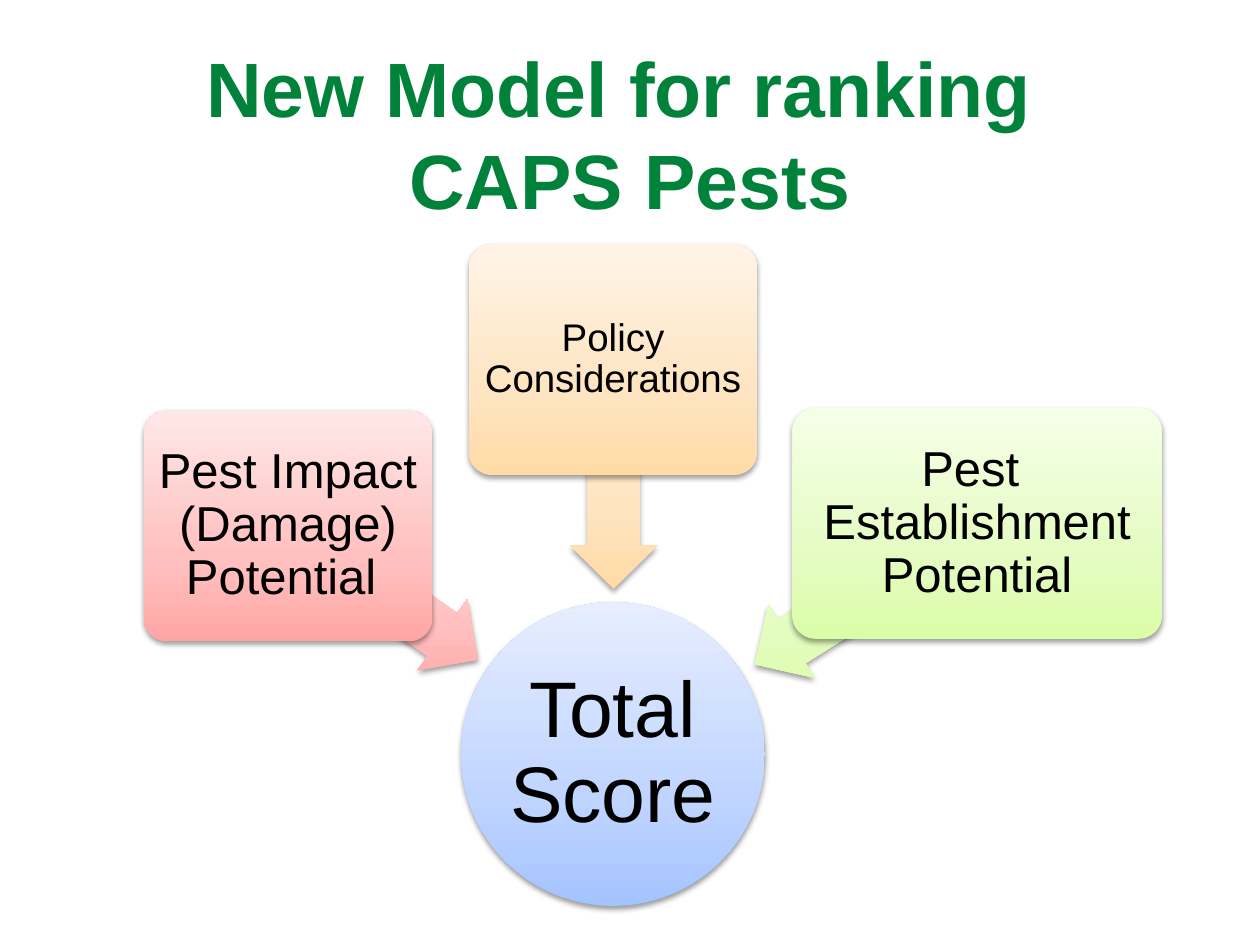
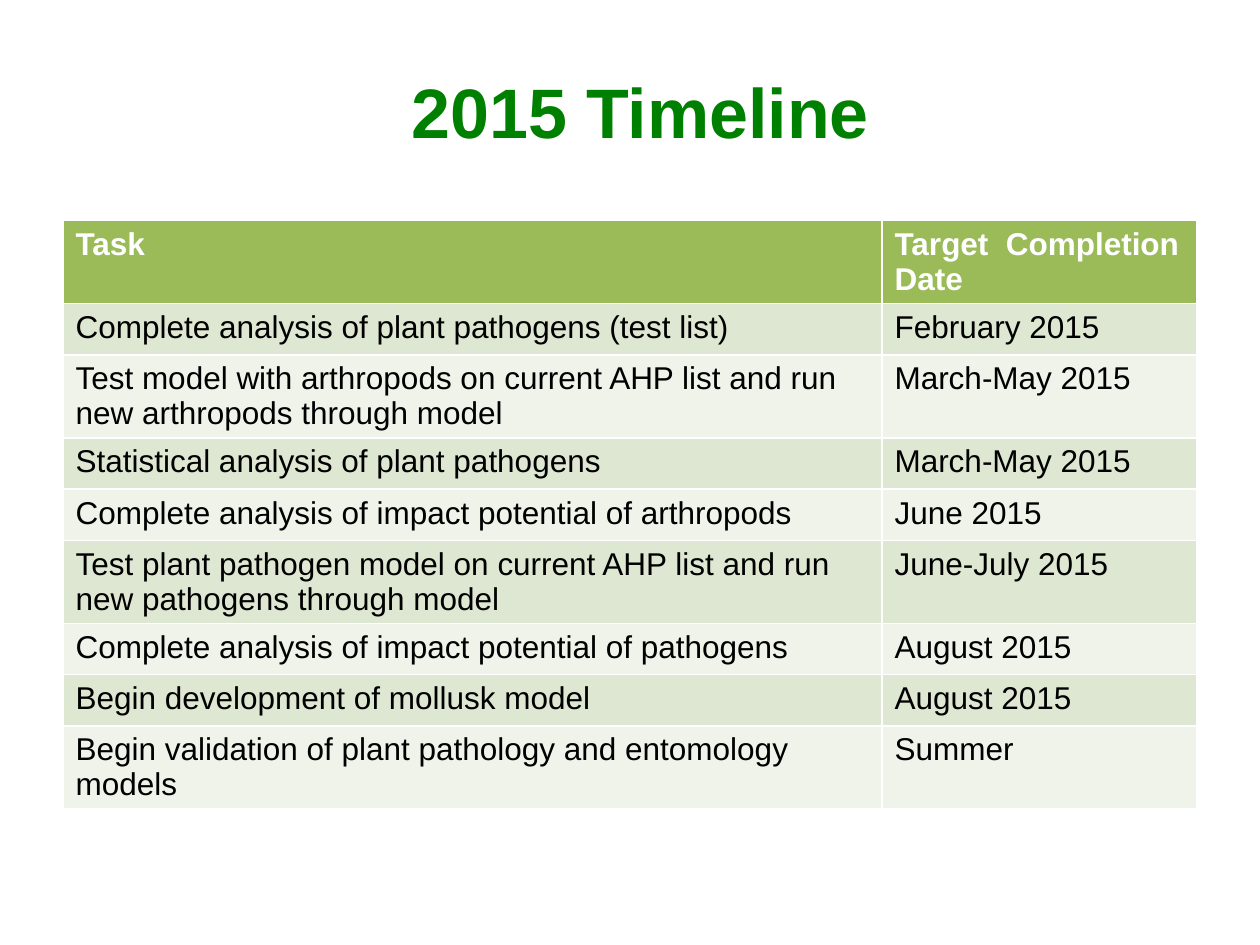
from copy import deepcopy

from pptx import Presentation
from pptx import util as u
from pptx.dml.color import RGBColor
from pptx.enum import shapes, text
from pptx.oxml import ns, parse_xml

FONT = "Arial"
BLACK, WHITE = "000000", "FFFFFF"
HEADER_GREEN, BANDS = "9BBB59", ("DEE7D1", "EFF3EA")
STOPS = (0, 0.35, 1)
RED = ("FFA6A5", "FFC0BF", "FFE7E7")
ORANGE = ("FFDAA5", "FEE4C0", "FFF4E7")
LIME = ("DAFDA7", "E4FCC2", "F5FFE7")
BLUE = ("A4C4FF", "BFD4FF", "E6EEFF")
SHADOW = (
    f'<a:effectLst {ns.nsdecls("a")}><a:outerShdw blurRad="40000" dist="20000" '
    'dir="5400000" rotWithShape="0"><a:srgbClr val="000000">'
    '<a:alpha val="38000"/></a:srgbClr></a:outerShdw></a:effectLst>'
)

deck = Presentation()
deck.slide_width, deck.slide_height = u.Inches(10), u.Inches(7.5)
COLUMN, ROW = deck.slide_width / 100, deck.slide_height / 75


def grid(left, top, width, height):
    """Turn columns and rows of a 100 by 75 grid into slide lengths."""
    return int(left * COLUMN), int(top * ROW), int(width * COLUMN), int(height * ROW)


def write(para, words, size, color, bold=False):
    """Add one formatted run to a paragraph."""
    span = para.add_run()
    span.text = words
    span.font.name, span.font.size, span.font.bold = FONT, u.Pt(size), bold
    span.font.color.rgb = RGBColor.from_string(color)


# Pages and their titles
titles = [
    (("New Model for ranking ", "CAPS Pests"), (5, 4.3, 90, 12.5), 44, "00823B"),
    (("2015 Timeline",), (5.8, 2.5, 90, 12.5), 40, "008000"),
]
pages = []
for lines, place, size, color in titles:
    page = deck.slides.add_slide(deck.slide_layouts[5])
    title = page.shapes.title
    title.left, title.top, title.width, title.height = grid(*place)
    title.text_frame.auto_size = text.MSO_AUTO_SIZE.NONE
    title.text_frame.vertical_anchor = text.MSO_ANCHOR.MIDDLE
    para = title.text_frame.paragraphs[0]
    para.alignment = text.PP_ALIGN.CENTER
    for number, line in enumerate(lines):
        if number:
            para.add_line_break()
        write(para, line, size, color, bold=True)
    pages.append(page)
model_page, timeline_page = pages

# Score model: each factor box lies over the arrow to the total
CIRCLE = shapes.MSO_SHAPE.OVAL
ARROW = shapes.MSO_SHAPE.LEFT_ARROW
BOX = shapes.MSO_SHAPE.ROUNDED_RECTANGLE
model_parts = [
    # kind, place, rotation, adjustments, gradient, paragraphs, text size, inset
    (CIRCLE, (36.6, 47.8, 24.1, 24.1), 0, (), BLUE, ["Total Score"], 45, 0.03),
    (ARROW, (21.1, 43.6, 18.5, 6.9), 215, (0.6, 0.5), RED, [], 0, 0),
    (BOX, (11.4, 32.6, 22.9, 18.3), 0, (0.1,), RED,
     ["Pest Impact (Damage) Potential "], 28, 0.05),
    (ARROW, (39.6, 34.2, 18.2, 6.9), 270, (0.6, 0.5), ORANGE, [], 0, 0),
    (BOX, (37.2, 19.4, 22.9, 18.3), 0, (0.1,), ORANGE,
     ["Policy Considerations"], 22, 0.05),
    (ARROW, (58.3, 43.7, 20.9, 6.9), 327.7, (0.6, 0.5), LIME, [], 0, 0),
    (BOX, (62.9, 32.4, 29.3, 18.3), 0, (0.1,), LIME,
     ["Pest ", "Establishment", "Potential"], 28, 0.05),
]
for kind, place, rotation, adjustments, colors, lines, size, inset in model_parts:
    shape = model_page.shapes.add_shape(kind, *grid(*place))
    shape.rotation = rotation
    for number, value in enumerate(adjustments):
        shape.adjustments[number] = value
    shape.line.fill.background()

    # Three-stop gradient, darkest at the bottom of the slide
    shape.fill.gradient()
    shape.fill.gradient_angle = 90
    properties = shape._element.spPr
    properties.find(ns.qn("a:gradFill")).set("rotWithShape", "0")
    stop_list = properties.find(".//" + ns.qn("a:gsLst"))
    stop_list.insert(1, deepcopy(stop_list[0]))
    for stop, position, color in zip(shape.fill.gradient_stops, STOPS, colors):
        stop.position = position
        stop.color.rgb = RGBColor.from_string(color)
    properties.append(parse_xml(SHADOW))

    frame = shape.text_frame
    frame.word_wrap = True
    frame.vertical_anchor = text.MSO_ANCHOR.MIDDLE
    frame.margin_left = frame.margin_right = u.Inches(inset)
    frame.margin_top = frame.margin_bottom = u.Inches(inset)
    for number, line in enumerate(lines):
        para = frame.add_paragraph() if number else frame.paragraphs[0]
        para.alignment = text.PP_ALIGN.CENTER
        para.line_spacing = 0.9
        write(para, line, size, BLACK)

# Timeline table
timeline = [
    ("Task", "Target  Completion Date"),
    ("Complete analysis of plant pathogens (test list)", "February 2015"),
    ("Test model with arthropods on current AHP list and run new arthropods "
     "through model", "March-May 2015"),
    ("Statistical analysis of plant pathogens", "March-May 2015"),
    ("Complete analysis of impact potential of arthropods", "June 2015"),
    ("Test plant pathogen model on current AHP list and run new pathogens "
     "through model", "June-July 2015"),
    ("Complete analysis of impact potential of pathogens", "August 2015"),
    ("Begin development of mollusk model", "August 2015"),
    ("Begin validation of plant pathology and entomology models", "Summer"),
]
row_height = 4.06
table = timeline_page.shapes.add_table(
    len(timeline), 2, *grid(5, 17.5, 90, row_height * len(timeline))
).table
for column, width in zip(table.columns, (65, 25)):
    column.width = int(width * COLUMN)
for row, entries in enumerate(timeline):
    header = row == 0
    for column, words in enumerate(entries):
        cell = table.cell(row, column)
        cell.fill.solid()
        cell.fill.fore_color.rgb = RGBColor.from_string(
            HEADER_GREEN if header else BANDS[(row - 1) % 2])
        write(cell.text_frame.paragraphs[0], words, 18,
              WHITE if header else BLACK, bold=header)

deck.save("out.pptx")
